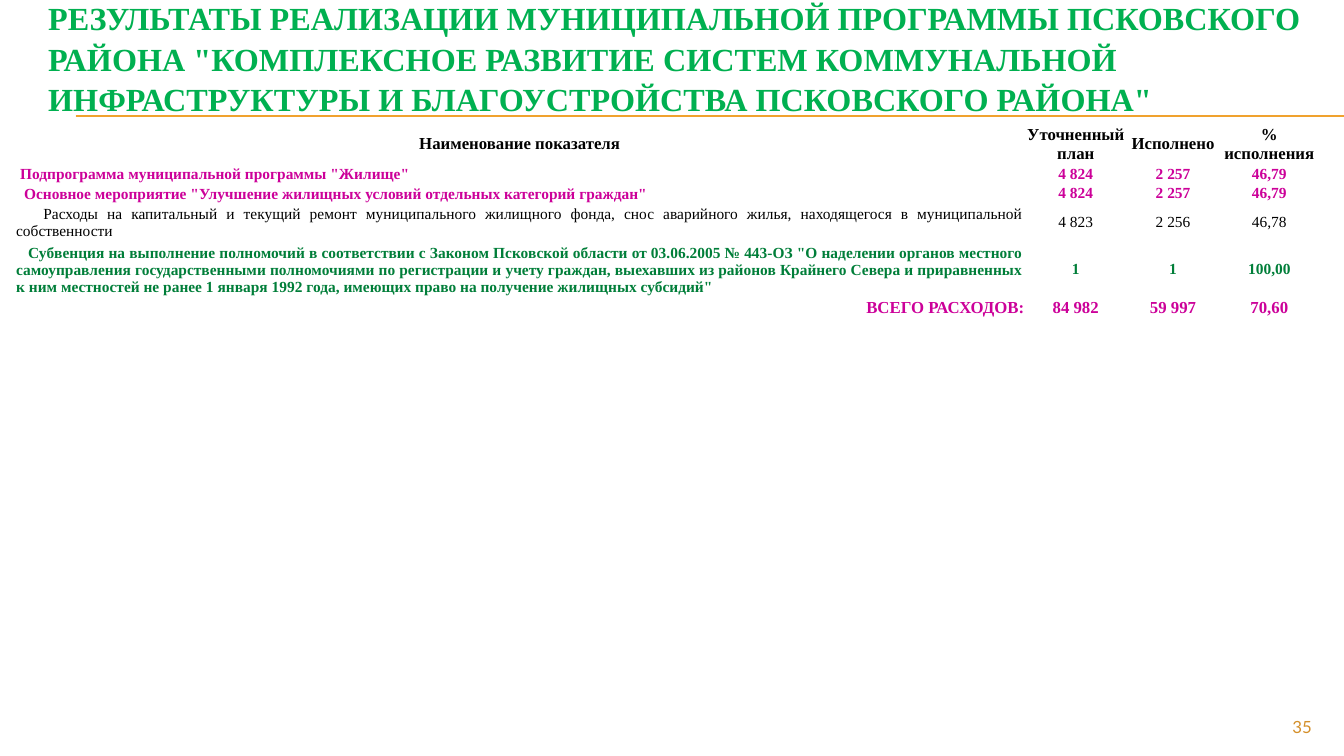
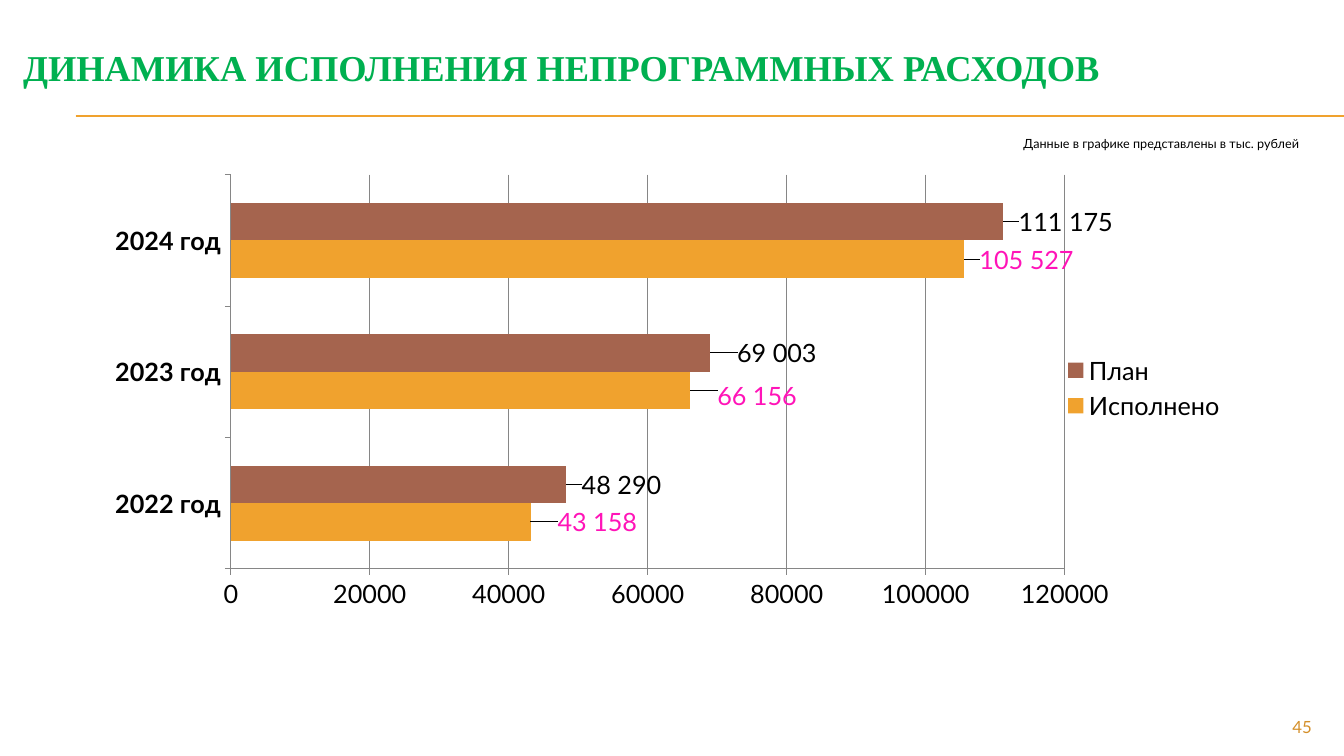
import dataclasses

import lxml.etree
import pptx
import pptx.chart.data
import pptx.dml.color
import pptx.enum.chart
import pptx.enum.shapes
import pptx.enum.text
import pptx.oxml
import pptx.oxml.ns
import pptx.util

Inches = pptx.util.Inches
qn = pptx.oxml.ns.qn
ALIGN = pptx.enum.text.PP_ALIGN
ANCHOR = pptx.enum.text.MSO_ANCHOR
CHART = pptx.enum.chart


def rgb(code):
    return pptx.dml.color.RGBColor.from_string(code)


@dataclasses.dataclass(frozen=True)
class Theme:
    serif: str = "Times New Roman"
    sans: str = "Lato"
    white: str = "FFFFFF"
    black: str = "000000"
    title: str = "00B050"
    gold: str = "F0A22E"
    brown: str = "A5644E"
    page: str = "D48F29"
    rose: str = "CC0099"
    green: str = "007E39"
    pink: str = "FF14B8"
    axis: str = "868686"
    small: int = 9
    body: int = 11
    head: int = 12
    chart: int = 18


T = Theme()


def put(item, form):
    """Set every attribute named in the dict."""
    for name, value in form.items():
        setattr(item, name, value)


def ink(font, size, color, name, bold=False):
    put(font, {"size": pptx.util.Pt(size), "name": name, "bold": bold})
    font.color.rgb = rgb(color)


def stroke(line, color, width=0.75):
    line.color.rgb = rgb(color)
    line.width = pptx.util.Pt(width)


def inches(box):
    return [Inches(part) for part in box]


def text(slide, box, words, font, align=ALIGN.LEFT, gap=1.0):
    frame = slide.shapes.add_textbox(*inches(box)).text_frame
    put(frame, {"word_wrap": True, "vertical_anchor": ANCHOR.MIDDLE})
    para = frame.paragraphs[0]
    put(para, {"alignment": align, "line_spacing": gap})
    run = para.add_run()
    run.text = words
    ink(run.font, *font)


def base(deck, box, title, size, page):
    """Add a slide with its title, double rule and page number."""
    slide = deck.slides.add_slide(deck.slide_layouts[6])
    for y in (1.15, 1.16):
        rule = slide.shapes.add_connector(
            pptx.enum.shapes.MSO_CONNECTOR.STRAIGHT,
            *inches((0.75, y, 13.33, y)))
        stroke(rule.line, T.gold)
        lxml.etree.SubElement(rule._element.spPr, qn("a:effectLst"))
    text(slide, box, title, (size, T.title, T.serif, True), gap=1.05)
    text(slide, (12, 7.08, 1.11, 0.27), page, (T.head, T.page, T.sans),
         ALIGN.RIGHT)
    return slide


# Each row: height, first-line indent, name alignment, font, cells
HEAD = (T.head, T.black, T.serif, True)
ROSE = (T.body, T.rose, T.serif, True)
ROWS = [
    (0.38, 0, ALIGN.CENTER, HEAD,
     ("Наименование показателя", "Уточненный план", "Исполнено",
      "% исполнения")),
    (0.18, 0.04, ALIGN.JUSTIFY, ROSE,
     ('Подпрограмма муниципальной программы "Жилище"',
      "4 824", "2 257", "46,79")),
    (0.18, 0.08, ALIGN.JUSTIFY, ROSE,
     ('Основное мероприятие "Улучшение жилищных условий отдельных '
      'категорий граждан"', "4 824", "2 257", "46,79")),
    (0.35, 0.27, ALIGN.JUSTIFY, (T.body, T.black, T.serif),
     ("Расходы на капитальный и текущий ремонт муниципального жилищного "
      "фонда, снос аварийного жилья, находящегося в муниципальной "
      "собственности", "4 823", "2 256", "46,78")),
    (0.52, 0.12, ALIGN.JUSTIFY, (T.body, T.green, T.serif, True),
     ("Субвенция на выполнение полномочий в соответствии с Законом "
      'Псковской области от 03.06.2005 № 443-ОЗ "О наделении органов '
      "местного самоуправления государственными полномочиями по "
      "регистрации и учету граждан, выехавших из районов Крайнего Севера "
      "и приравненных к ним местностей не ранее 1 января 1992 года, "
      'имеющих право на получение жилищных субсидий"',
      "1", "1", "100,00")),
    (0.19, 0, ALIGN.RIGHT, (T.head, T.rose, T.serif, True),
     ("ВСЕГО РАСХОДОВ:", "84 982", "59 997", "70,60")),
]
COLS = (10.01, 1.02, 0.91, 1)


def fill(cell, words, font, align, indent, pad):
    cell.fill.solid()
    cell.fill.fore_color.rgb = rgb(T.white)
    put(cell, {"margin_left": Inches(pad), "margin_right": Inches(pad),
               "margin_top": Inches(pad), "margin_bottom": 0,
               "vertical_anchor": ANCHOR.MIDDLE})
    para = cell.text_frame.paragraphs[0]
    para.alignment = align
    para._p.get_or_add_pPr().set("indent", str(Inches(indent)))
    run = para.add_run()
    run.text = words
    ink(run.font, *font)


def grid(slide, left, top):
    box = (left, top, sum(COLS), sum(row[0] for row in ROWS))
    table = slide.shapes.add_table(len(ROWS), len(COLS), *inches(box)).table
    put(table, {"first_row": False, "horz_banding": False})
    for col, width in zip(table.columns, COLS):
        col.width = Inches(width)
    for r, (height, indent, align, font, cells) in enumerate(ROWS):
        table.rows[r].height = Inches(height)
        for c, words in enumerate(cells):
            side = (ALIGN.CENTER, 0, 0)
            if c == 0:
                pad = 0.01 if align == ALIGN.JUSTIFY else 0
                side = (align, indent, pad)
            fill(table.cell(r, c), words, font, *side)


def place(x, y, w=None, h=None):
    """Make a manual chart layout; with a size it sets the inner plot."""
    node = lxml.etree.Element(qn("c:layout"))
    man = lxml.etree.SubElement(node, qn("c:manualLayout"))
    parts = {"x": x, "y": y}
    if w:
        parts = {"layoutTarget": "inner", "xMode": "edge", "yMode": "edge",
                 **parts, "w": w, "h": h}
    for tag, value in parts.items():
        lxml.etree.SubElement(man, qn("c:" + tag)).set("val", str(value))
    return node


# Each series: name, values, bar colour, label colour, label shifts, leaders
YEARS = ("2022 год", "2023 год", "2024 год")
SERIES = [
    ("Исполнено", (43158, 66156, 105527), T.gold, T.pink,
     ((0.02, 0), (0.02, 0.01), (0.01, 0)), True),
    ("План", (48290, 69003, 111175), T.brown, T.black,
     ((0.01, 0), (0.02, 0), (0.01, 0)), False),
]
LEADERS = (
    '<c:extLst xmlns:c="http://schemas.openxmlformats.org/drawingml/2006/'
    'chart"><c:ext uri="{CE6537A1-D6FC-4f65-9D91-7224C49458BB}" '
    'xmlns:c15="http://schemas.microsoft.com/office/drawing/2012/chart">'
    '<c15:showLeaderLines val="1"/></c:ext></c:extLst>')


def mark(series, color, shifts, leads):
    """Label each bar's end, shifted by a share of the chart's size."""
    labels = series.data_labels
    put(labels, {"show_value": True, "number_format": "#\\ ##0",
                 "number_format_is_linked": False})
    ink(labels.font, T.chart, color, T.sans)
    for i, shift in enumerate(shifts):
        label = series.points[i].data_label
        ink(label.font, T.chart, color, T.sans)
        label.position = CHART.XL_LABEL_POSITION.OUTSIDE_END
        index = labels._element.findall(qn("c:dLbl"))[i].find(qn("c:idx"))
        form = lxml.etree.Element(qn("c:numFmt"))
        form.set("formatCode", "#\\ ##0")
        form.set("sourceLinked", "0")
        index.addnext(form)
        index.addnext(place(*shift))
    if leads:
        labels._element.append(pptx.oxml.parse_xml(LEADERS))


def bars(slide, box):
    data = pptx.chart.data.CategoryChartData()
    data.categories = YEARS
    for name, values, *_ in SERIES:
        data.add_series(name, values)
    chart = slide.shapes.add_chart(
        CHART.XL_CHART_TYPE.BAR_CLUSTERED, *inches(box), data).chart
    put(chart, {"has_title": False, "has_legend": True})
    ink(chart.font, T.chart, T.black, T.sans)
    put(chart.legend, {"position": CHART.XL_LEGEND_POSITION.RIGHT,
                       "include_in_layout": False})
    area = chart._chartSpace.chart.plotArea
    for old in area.findall(qn("c:layout")):
        area.remove(old)
    area.insert(0, place(0.12, 0.04, 0.73, 0.85))
    plot = chart.plots[0]
    put(plot, {"gap_width": 150, "overlap": 0, "vary_by_categories": False})
    for axis in (chart.category_axis, chart.value_axis):
        axis.major_tick_mark = CHART.XL_TICK_MARK.OUTSIDE
        stroke(axis.format.line, T.axis)
    ink(chart.category_axis.tick_labels.font, T.chart, T.black, T.sans, True)
    put(chart.value_axis, {"has_major_gridlines": True, "minimum_scale": 0,
                           "maximum_scale": 120000, "major_unit": 20000})
    stroke(chart.value_axis.major_gridlines.format.line, T.axis)
    for series, (_, _, color, *label) in zip(plot.series, SERIES):
        series.format.fill.solid()
        series.format.fill.fore_color.rgb = rgb(color)
        mark(series, *label)


def results(deck):
    slide = base(
        deck, (0.38, 0.11, 12.67, 0.92),
        "РЕЗУЛЬТАТЫ РЕАЛИЗАЦИИ МУНИЦИПАЛЬНОЙ ПРОГРАММЫ ПСКОВСКОГО РАЙОНА "
        '"КОМПЛЕКСНОЕ РАЗВИТИЕ СИСТЕМ КОММУНАЛЬНОЙ ИНФРАСТРУКТУРЫ И '
        'БЛАГОУСТРОЙСТВА ПСКОВСКОГО РАЙОНА"', 23, "35")
    grid(slide, 0.15, 1.23)


def trend(deck):
    slide = base(deck, (0.13, 0.21, 12.85, 0.89),
                 "ДИНАМИКА ИСПОЛНЕНИЯ НЕПРОГРАММНЫХ РАСХОДОВ", 26, "45")
    bars(slide, (0.93, 1.55, 11.33, 4.6))
    text(slide, (9.48, 1.3, 3.5, 0.25),
         "Данные в графике представлены в тыс. рублей",
         (T.small, T.black, T.sans), ALIGN.RIGHT)


def main():
    deck = pptx.Presentation()
    put(deck, {"slide_width": Inches(13.33), "slide_height": Inches(7.5)})
    results(deck)
    trend(deck)
    deck.save("out.pptx")


if __name__ == "__main__":
    main()
